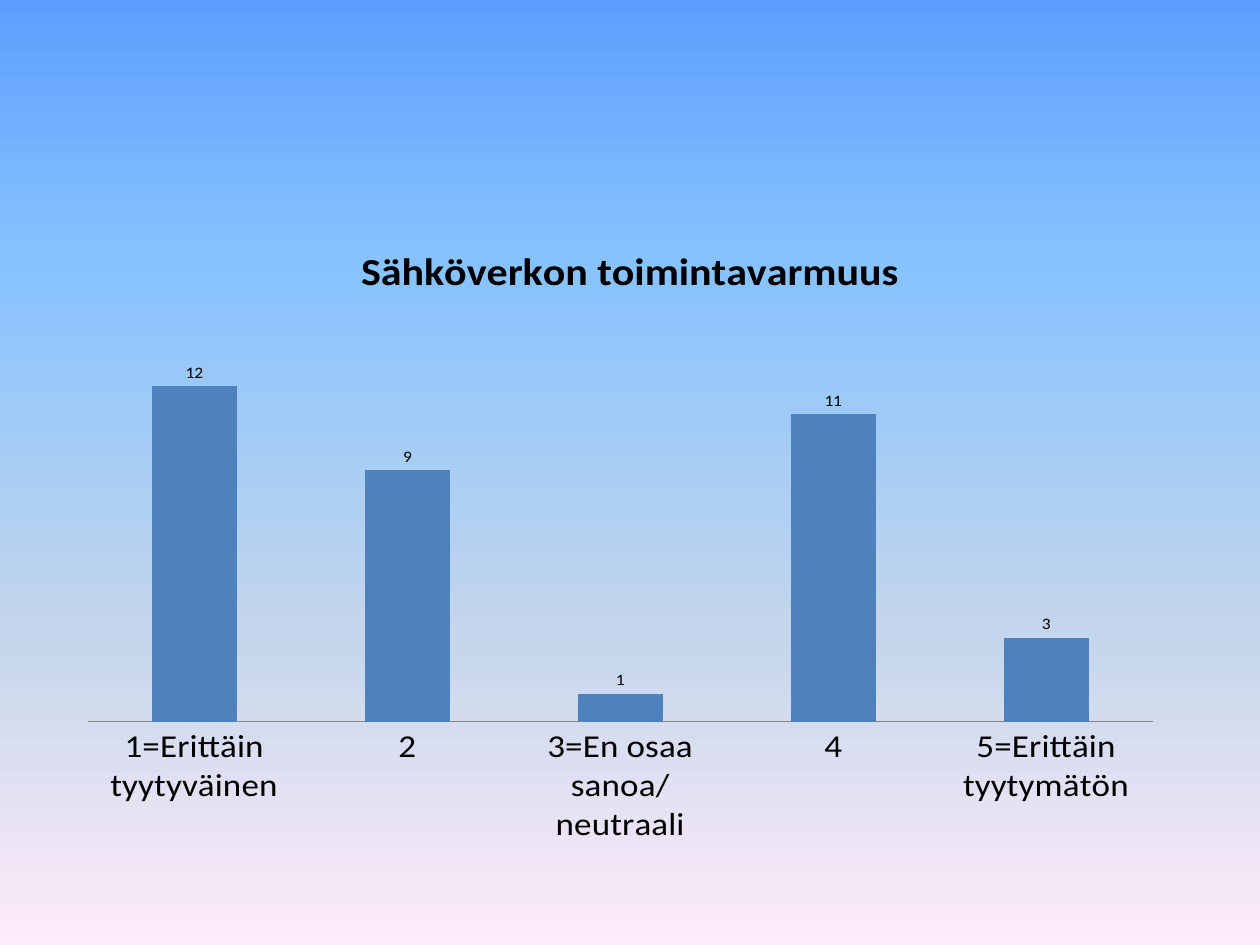
from lxml import etree
from pptx import Presentation
from pptx.chart.data import CategoryChartData
from pptx.dml.color import RGBColor
from pptx.enum.chart import XL_CHART_TYPE, XL_LABEL_POSITION, XL_TICK_MARK
from pptx.oxml.ns import qn
from pptx.util import Cm, Pt

COLUMN = XL_CHART_TYPE.COLUMN_CLUSTERED
OUTSIDE_END = XL_LABEL_POSITION.OUTSIDE_END
NO_TICK = XL_TICK_MARK.NONE

FONT = "Calibri"
COLORS = {"text": "000000", "bar": "4F81BD", "axis": "878787"}
BACKGROUND = {0: "5E9EFF", 27: "85C2FF", 67: "C4D6EB", 100: "FFEBFA"}
TITLE = "Sähköverkon toimintavarmuus"
RATINGS = {
    "1=Erittäin tyytyväinen": 12,
    "2": 9,
    "3=En osaa sanoa/neutraali": 1,
    "4": 11,
    "5=Erittäin tyytymätön": 3,
}
PLOT = {"x": 0.022, "y": 0.194, "w": 0.939, "h": 0.69}


def rgb(name):
    return RGBColor.from_string(COLORS[name])


def style_font(font, size, bold=False):
    font.name = FONT
    font.size = Pt(size)
    font.bold = bold
    font.color.rgb = rgb("text")


def fill_background(slide):
    fill = slide.background.fill
    fill.gradient()
    fill.gradient_angle = 270
    stops = next(slide.element.iter(qn("a:gsLst")))
    for stop in list(stops):
        stops.remove(stop)
    for percent, color in BACKGROUND.items():
        stop = etree.SubElement(stops, qn("a:gs"), pos=str(percent * 1000))
        etree.SubElement(stop, qn("a:srgbClr"), val=color)


def set_plot_layout(chart):
    area = chart.element.chart.plotArea
    for old in area.findall(qn("c:layout")):
        area.remove(old)
    layout = etree.Element(qn("c:layout"))
    area.insert(0, layout)
    manual = etree.SubElement(layout, qn("c:manualLayout"))
    settings = {"layoutTarget": "inner", "xMode": "edge", "yMode": "edge", **PLOT}
    for tag, value in settings.items():
        etree.SubElement(manual, qn(f"c:{tag}"), val=str(value))


def add_rating_chart(slide, left, top, width, height):
    data = CategoryChartData()
    data.categories = list(RATINGS)
    data.add_series("Series 1", list(RATINGS.values()))
    chart = slide.shapes.add_chart(COLUMN, left, top, width, height, data).chart
    style_font(chart.font, 10)
    chart.has_legend = False

    chart.has_title = True
    tf = chart.chart_title.text_frame
    tf.text = TITLE
    style_font(tf.paragraphs[0].font, 24, bold=True)
    chart.chart_title.include_in_layout = False

    axis = chart.category_axis
    axis.major_tick_mark = NO_TICK
    axis.minor_tick_mark = NO_TICK
    axis.format.line.color.rgb = rgb("axis")
    axis.format.line.width = Pt(0.75)
    style_font(axis.tick_labels.font, 20)

    chart.value_axis.visible = False
    chart.value_axis.has_major_gridlines = False
    chart.value_axis.minimum_scale = 0
    chart.value_axis.maximum_scale = 14

    plot = chart.plots[0]
    plot.gap_width = 150
    plot.overlap = -25
    plot.vary_by_categories = False
    bars = plot.series[0].format
    bars.fill.solid()
    bars.fill.fore_color.rgb = rgb("bar")

    plot.has_data_labels = True
    labels = plot.data_labels
    labels.show_value = True
    labels.position = OUTSIDE_END
    style_font(labels.font, 10)
    set_plot_layout(chart)


def main():
    prs = Presentation()
    prs.slide_width = Cm(25.4)
    prs.slide_height = Cm(19.05)
    slide = prs.slides.add_slide(prs.slide_layouts[6])
    fill_background(slide)
    add_rating_chart(slide, Cm(1.27), Cm(4.45), Cm(22.86), Cm(12.57))
    prs.save("out.pptx")


if __name__ == "__main__":
    main()
